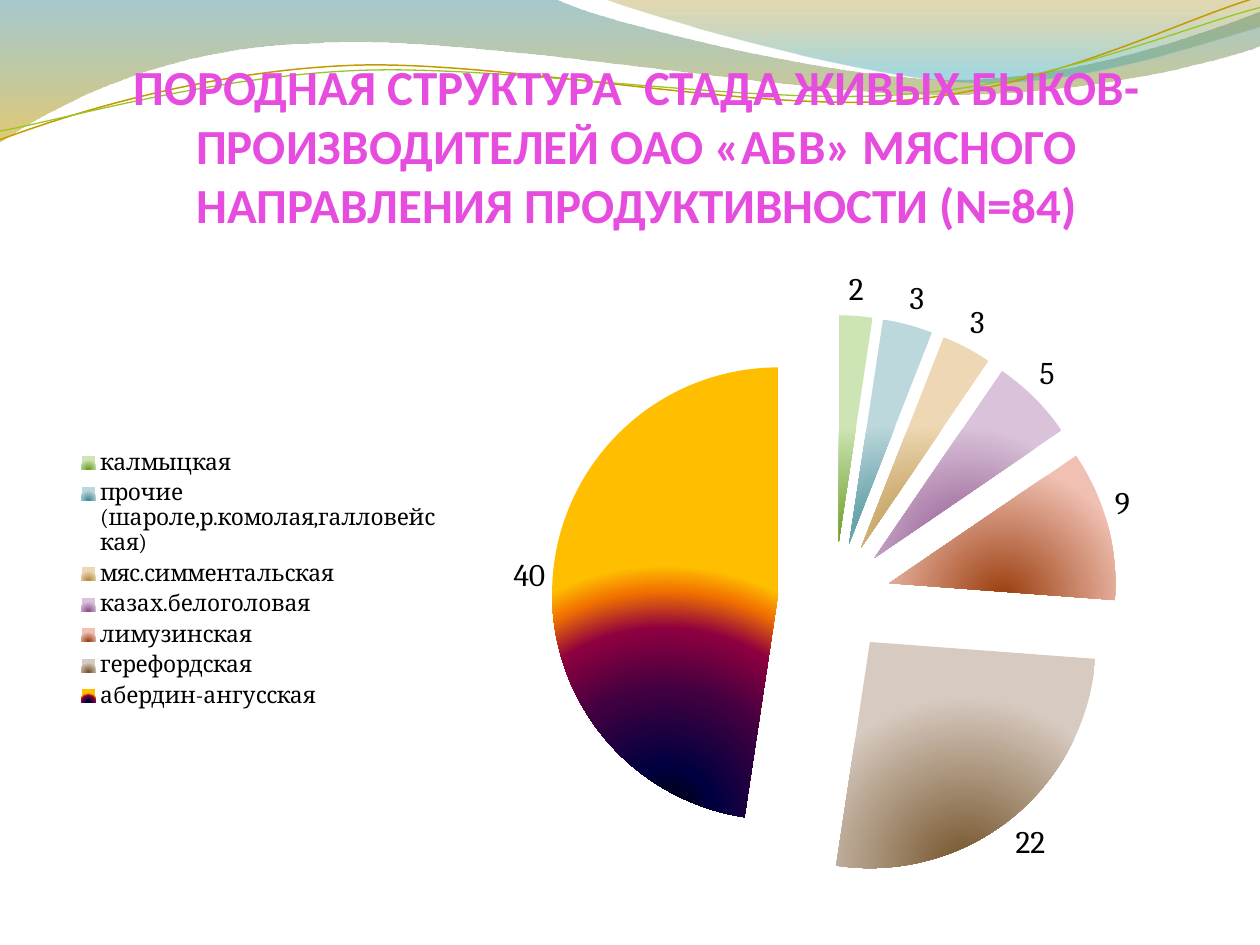
import pptx
import pptx.util
import pptx.chart.data
import pptx.dml.color
import pptx.enum.chart
import pptx.enum.text
import pptx.oxml
import pptx.oxml.ns

Inches = pptx.util.Inches
Pt = pptx.util.Pt
qn = pptx.oxml.ns.qn

TITLE = ("ПОРОДНАЯ СТРУКТУРА  СТАДА ЖИВЫХ БЫКОВ-ПРОИЗВОДИТЕЛЕЙ "
         "ОАО «АБВ» МЯСНОГО НАПРАВЛЕНИЯ ПРОДУКТИВНОСТИ (N=84)")
BREEDS = [
    ("калмыцкая", 2, [(0, "6B9A23"), (100, "CDE4B4")]),
    ("прочие (шароле,р.комолая,галловейская)", 3, [(0, "3F8A93"), (100, "BDD8DC")]),
    ("мяс.симментальская", 3, [(0, "B08A3A"), (100, "EED7B4")]),
    ("казах.белоголовая", 5, [(0, "8A4F87"), (100, "DAC3DA")]),
    ("лимузинская", 9, [(0, "993B0B"), (100, "F0C0B2")]),
    ("герефордская", 22, [(0, "735228"), (100, "D7CAC0")]),
    ("абердин-ангусская", 40, [(0, "000000"), (20, "000040"), (50, "400040"),
                               (75, "8F0040"), (90, "F27300"), (100, "FFBF00")]),
]
BANDS = [
    ([(0, 0), (4.4, -0.01),
      (4.76, 0.17, 6.64, 0.63, 7.58, 0.63), (8.53, 0.63, 9.58, 0.26, 10, 0.09),
      (10.01, 0.36),
      (9.83, 0.44, 8.7, 0.76, 7.46, 0.75), (6.22, 0.75, 3.82, 0.28, 2.57, 0.34),
      (1.29, 0.36, 0.46, 0.83, -0.01, 1.13)],
     [(0, "3B8890", 45), (100, "C99E00", 55)]),
    ([(4.79, -0.01),
      (5.09, 0.11, 6.82, 0.62, 7.69, 0.65), (8.56, 0.69, 9.61, 0.32, 10, 0.21),
      (10, 0)],
     [(0, "A48100", 30), (80, "3EA9B4", 45)]),
]
WAVES = [
    ([(0, 1.11), (0.48, 0.93, 1.58, 0.57, 2.77, 0.52),
      (3.95, 0.47, 5.93, 0.89, 7.13, 0.8), (8.33, 0.71, 9.38, 0.15, 9.98, -0.02)],
     "C49A00", 0.85),
    ([(0, 1.04), (0.47, 0.96, 1.64, 0.61, 2.83, 0.56),
      (4.03, 0.51, 5.97, 0.84, 7.17, 0.75), (8.36, 0.67, 9.41, 0.21, 10, 0.06)],
     "98C723", 0.75),
]
DOWNWARD = '<a:lin ang="5400000" scaled="0"/>'
FROM_BOTTOM = '<a:path path="circle"><a:fillToRect l="50000" t="100000" r="50000"/></a:path>'
CHART_AREA = (0.51, 2.02, 9.06, 5.2)
PIE_AREA = (4.83, 2.95, 3.59, 3.59)
LEGEND_AREA = (0.6, 3.53, 2.9, 2.14)


def color(value):
    return pptx.dml.color.RGBColor.from_string(value)


def set_gradient(fill, properties, stops, direction):
    fill.background()
    marks = "".join(
        f'<a:gs pos="{position * 1000}"><a:srgbClr val="{value}">'
        f'<a:alpha val="{alpha[0] * 1000 if alpha else 100000}"/></a:srgbClr></a:gs>'
        for position, value, *alpha in stops)
    gradient = pptx.oxml.parse_xml(
        f'<a:gradFill {pptx.oxml.ns.nsdecls("a")} rotWithShape="1">'
        f'<a:gsLst>{marks}</a:gsLst>{direction}</a:gradFill>')
    properties.replace(properties.find(qn("a:noFill")), gradient)


def add_outline(page, segments, closed):
    points = [(Inches(segment[i]), Inches(segment[i + 1]))
              for segment in segments for i in range(0, len(segment), 2)]
    builder = page.shapes.build_freeform(*points[0], scale=1.0)
    builder.add_line_segments(points[1:], close=closed)
    shape = builder.convert_to_shape()
    shape.shadow.inherit = False
    lines = iter(list(shape._element.iter(qn("a:lnTo"))))
    for segment in segments[1:]:
        first = next(lines)
        if len(segment) == 6:
            curve = pptx.oxml.parse_xml(f'<a:cubicBezTo {pptx.oxml.ns.nsdecls("a")}/>')
            first.addprevious(curve)
            for line in (first, next(lines), next(lines)):
                curve.append(line[0])
                line.getparent().remove(line)
    return shape


def add_background(page):
    for segments, stops in BANDS:
        band = add_outline(page, segments, True)
        set_gradient(band.fill, band._element.spPr, stops, DOWNWARD)
        band.line.fill.background()
    for segments, value, width in WAVES:
        wave = add_outline(page, segments, False)
        wave.fill.background()
        wave.line.color.rgb = color(value)
        wave.line.width = Pt(width)


def add_title(page):
    box = page.shapes.add_textbox(Inches(0.51), Inches(0.6), Inches(9.08), Inches(1.25))
    frame = box.text_frame
    frame.word_wrap = True
    frame.vertical_anchor = pptx.enum.text.MSO_ANCHOR.BOTTOM
    frame.margin_left = frame.margin_right = frame.margin_bottom = 0
    frame.margin_top = Inches(0.05)
    frame.text = TITLE
    para = frame.paragraphs[0]
    para.alignment = pptx.enum.text.PP_ALIGN.CENTER
    font = para.runs[0].font
    font.name, font.size, font.bold = "Calibri", Pt(28), True
    font.color.rgb = color("E64CDE")


def set_layout(element, index, area, target=""):
    for old in element.findall(qn("c:layout")):
        element.remove(old)
    left, top, width, height = CHART_AREA
    shares = {"x": (area[0] - left) / width, "y": (area[1] - top) / height,
              "w": area[2] / width, "h": area[3] / height}
    sizes = "".join(f'<c:{name} val="{value:.5f}"/>' for name, value in shares.items())
    element.insert(index, pptx.oxml.parse_xml(
        f'<c:layout {pptx.oxml.ns.nsdecls("c")}><c:manualLayout>{target}'
        f'<c:xMode val="edge"/><c:yMode val="edge"/>{sizes}</c:manualLayout></c:layout>'))


def style_font(font, size):
    font.name, font.size = "Cambria", Pt(size)
    font.color.rgb = color("000000")


def add_breed_chart(page):
    data = pptx.chart.data.CategoryChartData()
    data.categories = [name for name, _, _ in BREEDS]
    data.add_series("Series 1", [count for _, count, _ in BREEDS])
    chart = page.shapes.add_chart(
        pptx.enum.chart.XL_CHART_TYPE.PIE, *map(Inches, CHART_AREA), data).chart
    chart.has_title = False
    style_font(chart.font, 18)

    chart.has_legend = True
    legend = chart.legend
    legend.position = pptx.enum.chart.XL_LEGEND_POSITION.LEFT
    legend.include_in_layout = False
    style_font(legend.font, 13)
    set_layout(legend._element, 1, LEGEND_AREA)

    plot = chart.plots[0]
    plot.vary_by_categories = True
    set_layout(plot._element.getparent(), 0, PIE_AREA, '<c:layoutTarget val="inner"/>')
    plot.has_data_labels = True
    labels = plot.data_labels
    labels.show_value = True
    labels.show_percentage = False
    labels.position = pptx.enum.chart.XL_LABEL_POSITION.OUTSIDE_END
    style_font(labels.font, 18)

    series = plot.series[0]
    for index, (_, _, stops) in enumerate(BREEDS):
        style = series.points[index].format
        style.line.fill.background()
        properties = series._element.findall(qn("c:dPt"))[index].find(qn("c:spPr"))
        set_gradient(style.fill, properties, stops, FROM_BOTTOM)
        properties.addprevious(pptx.oxml.parse_xml(
            f'<c:explosion {pptx.oxml.ns.nsdecls("c")} val="25"/>'))


def main():
    deck = pptx.Presentation()
    deck.slide_width, deck.slide_height = Inches(10), Inches(7.5)
    page = deck.slides.add_slide(deck.slide_layouts[6])
    add_background(page)
    add_title(page)
    add_breed_chart(page)
    deck.save("out.pptx")


if __name__ == "__main__":
    main()
